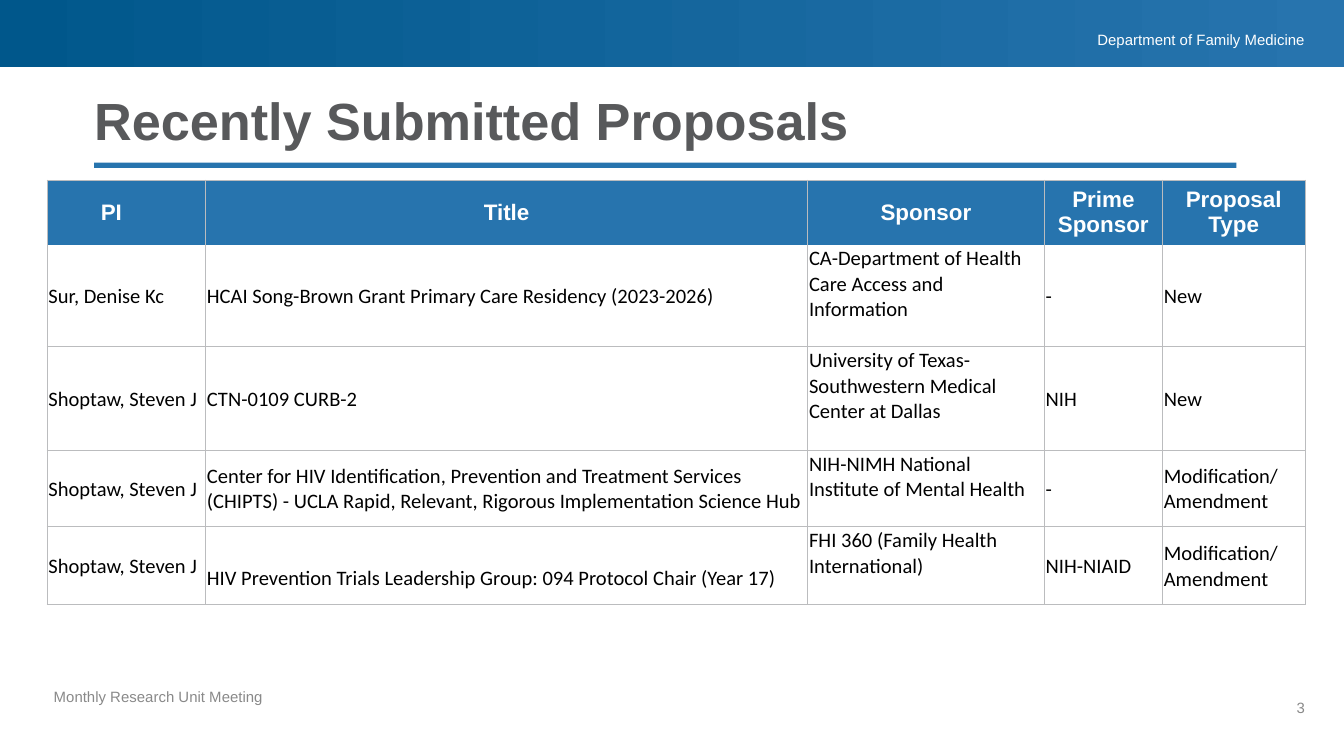
from lxml import etree
from pptx import Presentation
from pptx.dml.color import RGBColor
from pptx.enum.shapes import MSO_SHAPE
from pptx.enum.text import MSO_ANCHOR, PP_ALIGN
from pptx.oxml.ns import qn
from pptx.util import Inches, Pt

RECT = MSO_SHAPE.RECTANGLE
TOP, MIDDLE, BOTTOM = MSO_ANCHOR.TOP, MSO_ANCHOR.MIDDLE, MSO_ANCHOR.BOTTOM
LEFT, CENTER, RIGHT = PP_ALIGN.LEFT, PP_ALIGN.CENTER, PP_ALIGN.RIGHT
BLUE, DARK_BLUE, WHITE = "2774AE", "00578B", "FFFFFF"
GREY, DARK_GREY, BORDER = "898989", "58595B", "BBBCBE"


def rgb(color):
    return RGBColor.from_string(color)


def format_text(tf, size, color, font="Arial", bold=False, align=LEFT):
    tf.word_wrap = True
    for p in tf.paragraphs:
        p.alignment = align
        for r in p.runs:
            r.font.name, r.font.size, r.font.bold = font, Pt(size), bold
            r.font.color.rgb = rgb(color)


# 16:9 slide
prs = Presentation()
prs.slide_width = Inches(10)
prs.slide_height = Inches(10) * 9 // 16
s = prs.slides.add_slide(prs.slide_layouts[5])

# Header band and title rule
band = s.shapes.add_shape(RECT, 0, 0, Inches(10), Inches(0.5))
band.fill.gradient()
band.fill.gradient_angle = 0
for stop, color, position in zip(band.fill.gradient_stops, (DARK_BLUE, BLUE), (0, 1)):
    stop.color.rgb = rgb(color)
    stop.position = position
rule = s.shapes.add_shape(RECT, Inches(0.7), Inches(1.21), Inches(8.5), Inches(0.04))
rule.fill.solid()
rule.fill.fore_color.rgb = rgb(BLUE)
for sp in (band, rule):
    sp.line.fill.background()
    sp.shadow.inherit = False

# Title
title = s.shapes.title
title.left, title.top = Inches(0.7), Inches(0.7)
title.width, title.height = Inches(8.5), Inches(0.43)
tf = title.text_frame
tf.text = "Recently Submitted Proposals"
tf.margin_left = tf.margin_top = tf.margin_right = tf.margin_bottom = 0
tf.vertical_anchor = BOTTOM
tf.paragraphs[0].line_spacing = 0.9
format_text(tf, 28, DARK_GREY, bold=True)

# Department name, footer and page number
labels = [
    ("Department of Family Medicine", 7.2, 0.23, 2.51, 0.14, WHITE, RIGHT),
    ("Monthly Research Unit Meeting", 0.4, 5.12, 3.9, 0.4, GREY, LEFT),
    ("3", 9.21, 5.2, 0.5, 0.4, GREY, RIGHT),
]
for text, left, top, width, height, color, align in labels:
    sp = s.shapes.add_textbox(Inches(left), Inches(top), Inches(width), Inches(height))
    tf = sp.text_frame
    tf.text = text
    tf.margin_left = tf.margin_top = tf.margin_right = tf.margin_bottom = 0
    format_text(tf, 8, color, align=align)

# Proposals table
rows = [
    ("PI", "Title", "Sponsor", "Prime Sponsor", "Proposal Type"),
    ("Sur, Denise Kc", "HCAI Song-Brown Grant Primary Care Residency (2023-2026)",
     "CA-Department of Health Care Access and Information", "-", "New"),
    ("Shoptaw, Steven J", "CTN-0109 CURB-2",
     "University of Texas-Southwestern Medical Center at Dallas", "NIH", "New"),
    ("Shoptaw, Steven J",
     "Center for HIV Identification, Prevention and Treatment Services (CHIPTS) - "
     "UCLA Rapid, Relevant, Rigorous Implementation Science Hub",
     "NIH-NIMH National Institute of Mental Health", "-", "Modification/ Amendment"),
    ("Shoptaw, Steven J",
     "HIV Prevention Trials Leadership Group: 094 Protocol Chair (Year 17)",
     "FHI 360 (Family Health International)", "NIH-NIAID", "Modification/ Amendment"),
]
col_widths = [1.18, 4.48, 1.76, 0.88, 1.06]
row_heights = [0.48, 0.76, 0.77, 0.57, 0.58]
table = s.shapes.add_table(len(rows), len(col_widths), Inches(0.35), Inches(1.34),
                           Inches(sum(col_widths)), Inches(sum(row_heights))).table
table.horz_banding = False
for column, width in zip(table.columns, col_widths):
    column.width = Inches(width)
for row, height in zip(table.rows, row_heights):
    row.height = Inches(height)

for i, row in enumerate(rows):
    for j, text in enumerate(row):
        cell = table.cell(i, j)
        cell.text = text
        if i == 0:
            margins = (0.4, 0, 0, 0) if j == 0 else (0.05, 0.04, 0.05, 0.04)
            format_text(cell.text_frame, 12, WHITE, bold=True,
                        align=LEFT if j == 0 else CENTER)
        else:
            # The last title sits half a line below the middle of its row
            margins = (0.01, 0.19 if (i, j) == (4, 1) else 0.01, 0.01, 0)
            format_text(cell.text_frame, 11, "000000", font="Calibri")
        (cell.margin_left, cell.margin_top,
         cell.margin_right, cell.margin_bottom) = [Inches(m) for m in margins]
        cell.vertical_anchor = TOP if i > 0 and j == 2 else MIDDLE

        # Borders on every side except between header and body
        tc_pr = cell._tc.get_or_add_tcPr()
        for side in "LRTB":
            ln = etree.SubElement(tc_pr, qn(f"a:ln{side}"), w=str(Pt(0.5)))
            if (i, side) in ((0, "B"), (1, "T")):
                etree.SubElement(ln, qn("a:noFill"))
            else:
                fill = etree.SubElement(ln, qn("a:solidFill"))
                etree.SubElement(fill, qn("a:srgbClr"), val=BORDER)
        cell.fill.solid()
        cell.fill.fore_color.rgb = rgb(BLUE if i == 0 else WHITE)

prs.save("out.pptx")
